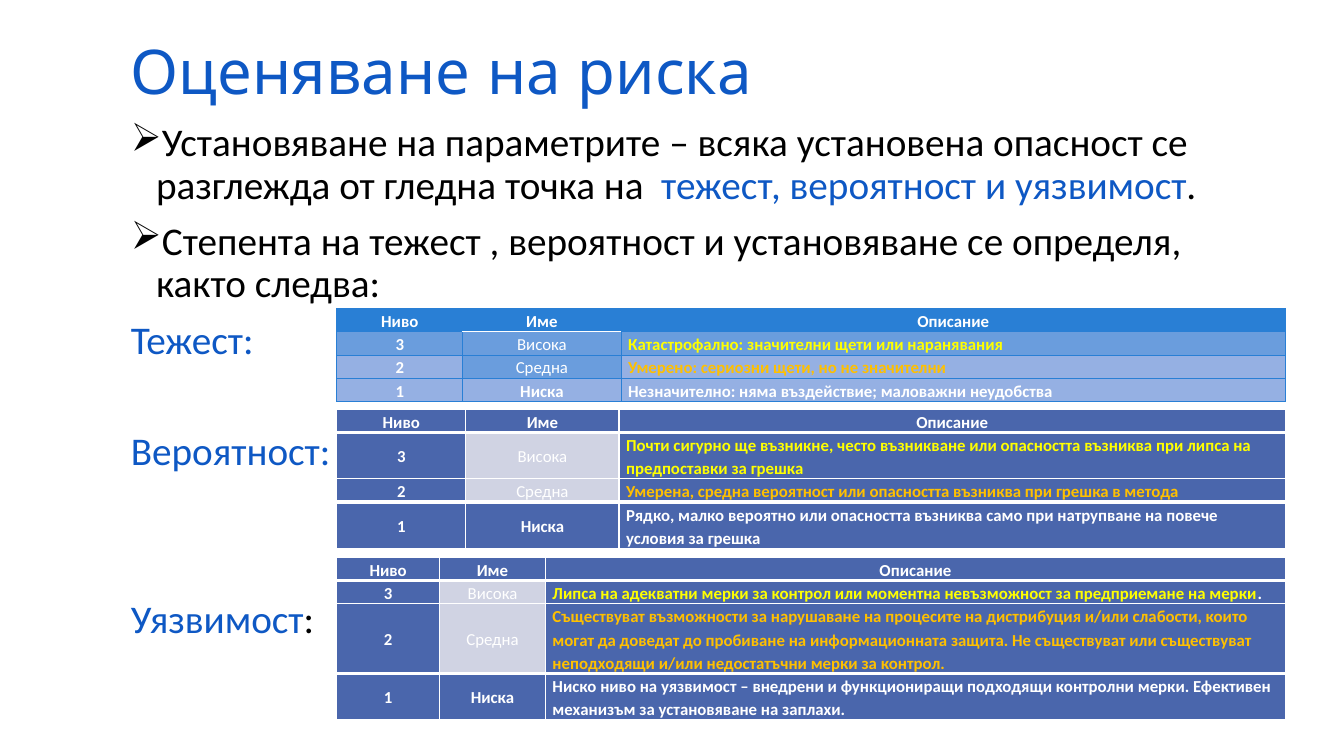
from pptx import Presentation
from pptx.dml.color import RGBColor
from pptx.enum.text import MSO_ANCHOR as ANCHOR, PP_ALIGN as ALIGN
from pptx.oxml.ns import qn
from pptx.util import Pt
from lxml.etree import SubElement

PX = 9144
WHITE, BLACK, BLUE = "FFFFFF", "000000", "0E58C4"
SKY, SKY_MID, SKY_LIGHT = "297FD5", "6A9DDD", "95B0E3"
NAVY, GREY = "4A66AC", "D0D3E3"
HEADERS = ("Ниво", "Име", "Описание")
LEVELS = (("3", "Висока", "FFFF00"), ("2", "Средна", "FFC000"), ("1", "Ниска", WHITE))


def rgb(value):
    """Turn a hex string into a colour."""
    return RGBColor.from_string(value)


def add_run(p, text, size, color, font="Calibri", bold=False):
    """Add one formatted run to a paragraph."""
    r = p.add_run()
    r.text = text
    r.font.size, r.font.name, r.font.bold = Pt(size), font, bold
    r.font.color.rgb = rgb(color)


def add_frame(s, box, anchor):
    """Add a wrapping text box and return its frame."""
    tf = s.shapes.add_textbox(*(v * PX for v in box)).text_frame
    tf.word_wrap, tf.vertical_anchor = True, anchor
    return tf


def add_title(s, box, text):
    """Write the slide title."""
    p = add_frame(s, box, ANCHOR.MIDDLE).paragraphs[0]
    p.line_spacing = 0.9
    add_run(p, text, 44, BLUE, "Quicksand")


def add_body(s, box, paragraphs):
    """Write bulleted points and table labels given as (bullet, space before, runs)."""
    tf = add_frame(s, box, ANCHOR.TOP)
    for i, (bullet, before, runs) in enumerate(paragraphs):
        p = tf.add_paragraph() if i else tf.paragraphs[0]
        p.line_spacing, p.space_before = 0.9, Pt(before)
        if bullet:
            pPr = p._p.get_or_add_pPr()
            pPr.set("marL", str(25 * PX))
            pPr.set("indent", str(-25 * PX))
            SubElement(pPr, qn("a:buChar")).set("char", "➢")
        for text, color in runs:
            add_run(p, text, 28, color)


def set_borders(cell, borders):
    """Draw the cell sides given as {side: (colour, points)}."""
    tcPr = cell._tc.get_or_add_tcPr()
    for side in "LRTB":
        color, width = borders[side]
        ln = SubElement(tcPr, qn(f"a:ln{side}"), w=str(Pt(width)))
        SubElement(SubElement(ln, qn("a:solidFill")), qn("a:srgbClr"), val=color)


def fill_cell(cell, runs, fill, borders, centred, gap):
    """Style one table cell and write its runs."""
    set_borders(cell, borders)
    cell.fill.solid()
    cell.fill.fore_color.rgb = rgb(fill)
    cell.margin_left = cell.margin_right = 7 * PX
    cell.margin_top = cell.margin_bottom = 0
    cell.vertical_anchor = ANCHOR.MIDDLE
    p = cell.text_frame.paragraphs[0]
    p.alignment = ALIGN.CENTER if centred else ALIGN.LEFT
    p.line_spacing, p.space_before, p.space_after = 1.15, Pt(gap), Pt(gap)
    for text, color, bold in runs:
        add_run(p, text, 12, color, bold=bold)


def add_levels(s, box, cols, rows, descriptions, fills, side, rules):
    """Build a level table; rules are the horizontal lines of each column."""
    tbl = s.shapes.add_table(4, 3, *(v * PX for v in box)).table
    tbl.first_row = tbl.horz_banding = False
    for col, width in zip(tbl.columns, cols):
        col.width = width * PX
    for row, height in zip(tbl.rows, rows):
        row.height = height * PX
    grid = [[[(text, WHITE, True)] for text in HEADERS]]
    for (level, name, color), (first, *rest) in zip(LEVELS, descriptions):
        grid.append([[(level, WHITE, True)], [(name, WHITE, level == "1")],
                     [(first, color, True)] + [(t, WHITE, True) for t in rest]])
    for i, line in enumerate(grid):
        for j, runs in enumerate(line):
            borders = {"L": side, "R": side, "T": rules[j][i], "B": rules[j][i + 1]}
            fill_cell(tbl.cell(i, j), runs, fills[i][j], borders,
                      i == 0 or j < 2, 1 if i else 3)


def build_slide(prs):
    """Place the title, the text and the three level tables."""
    s = prs.slides.add_slide(prs.slide_layouts[6])
    add_title(s, (120, 31, 1100, 86), "Оценяване на риска")
    add_body(s, (120, 117, 1100, 571), [
        (True, 10, [("Установяване на параметрите – всяка установена опасност се "
                     "разглежда от гледна точка на  ", BLACK),
                    ("тежест, вероятност и уязвимост", BLUE), (".", BLACK)]),
        (True, 10, [("Степента на тежест , вероятност и установяване се определя, "
                     "както следва:", BLACK)]),
        (False, 10, [("Тежест:", BLUE)]),
        (False, 49, [("Вероятност:", BLUE)]),
        (False, 90, [("Уязвимост", BLUE), (":", BLACK)]),
    ])

    thin, thick, sky = (WHITE, 1), (WHITE, 3), (SKY, 0.5)
    sky_fills = [[SKY] * 3, [SKY_MID] * 3, [SKY_LIGHT, SKY_MID, SKY_LIGHT], [SKY_LIGHT] * 3]
    sky_rules = [[sky] * 5, [sky, thin, sky, sky, sky], [sky] * 5]
    navy_fills = [[NAVY] * 3, [NAVY, GREY, NAVY], [NAVY, GREY, NAVY], [NAVY] * 3]
    navy_rules = [[thin, thick, thin, thick, thin]] * 3

    add_levels(s, (334, 306, 941, 92), (125, 157, 659), (23, 23, 23, 23), [
        ("Катастрофално: значителни щети или наранявания",),
        ("Умерено: сериозни щети, но не значителни",),
        ("Незначително: няма въздействие; маловажни неудобства",),
    ], sky_fills, sky, sky_rules)
    add_levels(s, (334, 406, 941, 138), (128, 152, 661), (23, 46, 23, 46), [
        ("Почти сигурно ще възникне, често възникване или опасността възниква "
         "при липса на предпоставки за грешка",),
        ("Умерена, средна вероятност или опасността възниква при грешка в метода",),
        ("Рядко, малко вероятно или опасността възниква само при натрупване "
         "на повече условия за грешка",),
    ], navy_fills, thin, navy_rules)
    add_levels(s, (334, 553, 941, 161), (102, 105, 734), (23, 23, 69, 46), [
        ("Липса на адекватни мерки за контрол или моментна невъзможност "
         "за предприемане на мерки", "."),
        ("Съществуват възможности за нарушаване на процесите на дистрибуция и/или "
         "слабости, които могат да доведат до пробиване на информационната защита. "
         "Не съществуват или съществуват неподходящи и/или недостатъчни мерки за контрол.",),
        ("Ниско ниво на уязвимост – внедрени и функциониращи подходящи контролни "
         "мерки. Ефективен механизъм за установяване на заплахи.",),
    ], navy_fills, thin, navy_rules)


def main():
    """Create and save the presentation."""
    prs = Presentation()
    prs.slide_width, prs.slide_height = 1333 * PX, 750 * PX
    build_slide(prs)
    prs.save("out.pptx")


if __name__ == "__main__":
    main()
